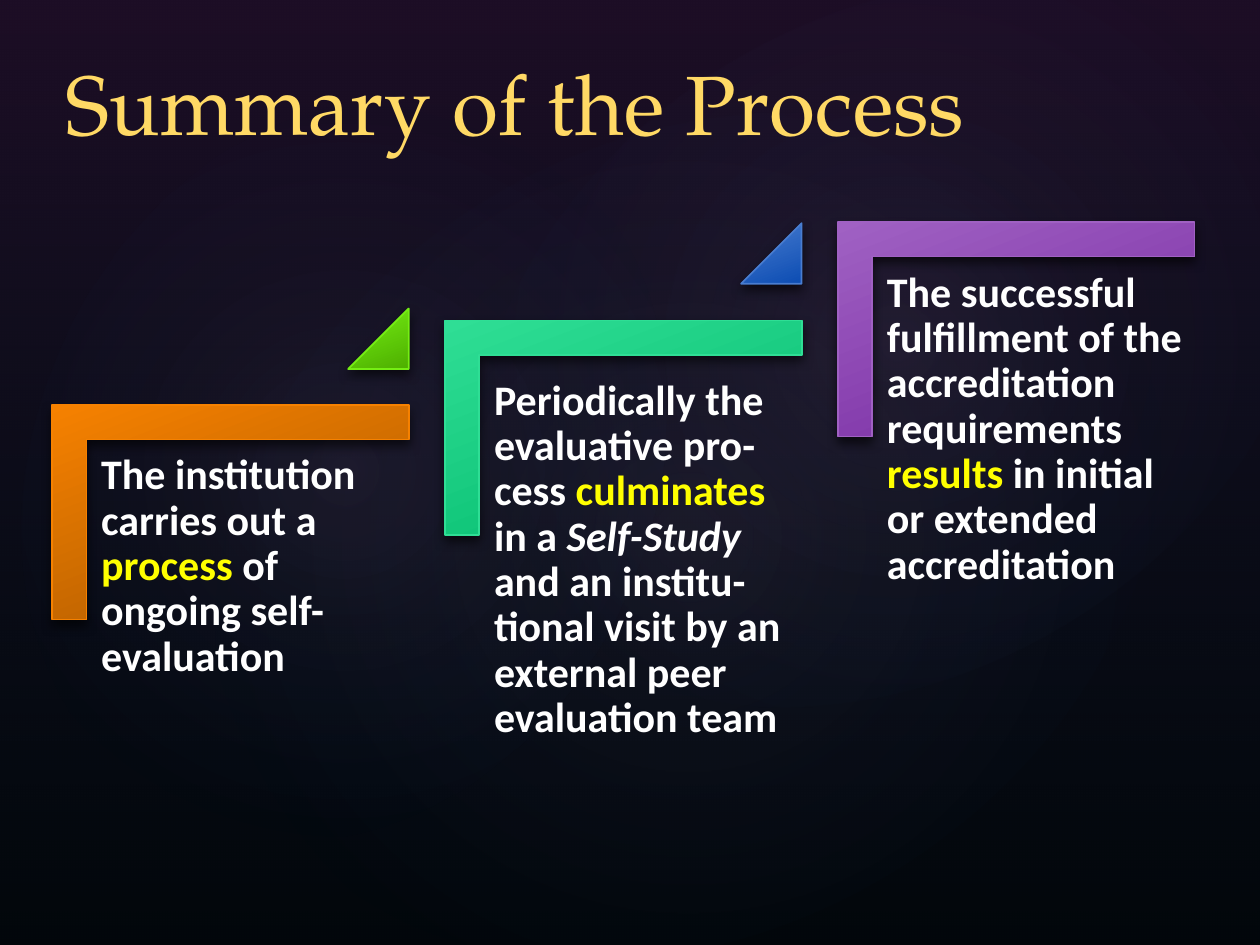
import pptx
import pptx.dml.color
import pptx.enum.shapes
import pptx.enum.text
import pptx.oxml
import pptx.oxml.ns
import pptx.util

Cm = pptx.util.Cm
Pt = pptx.util.Pt
RGB = pptx.dml.color.RGBColor.from_string
SHAPES = pptx.enum.shapes.MSO_SHAPE
ANCHOR = pptx.enum.text.MSO_ANCHOR
NAMESPACE = pptx.oxml.ns.nsdecls("a")

COLORS = {
    "background": "000000", "title": "FFD965", "text": "FFFFFF", "key": "FFFF00",
    "shade": "52286A", "navy": "1D4775", "glow": "C6A0DB",
    "orange": "F68100", "orange dark": "A85800",
    "lime": "75EE14", "lime dark": "4EB000",
    "green": "2FDE95", "green dark": "00B86B",
    "blue": "497DD0", "blue dark": "0D4DB3",
    "purple": "A061C3", "purple dark": "7527A0",
}


def add_text(runs, left, top, width, height, size=24, font="Calibri", bold=True,
             inset=0.25, spacing=0.9, anchor=ANCHOR.TOP):
    """Add a text box; runs are (text, colour name, italic) tuples."""
    frame = slide.shapes.add_textbox(Cm(left), Cm(top), Cm(width), Cm(height)).text_frame
    frame.word_wrap = True
    frame.vertical_anchor = anchor
    frame.margin_left = frame.margin_right = Cm(0.25)
    frame.margin_top = frame.margin_bottom = Cm(inset)
    paragraph = frame.paragraphs[0]
    paragraph.line_spacing = spacing
    for text, color, italic in runs:
        run = paragraph.add_run()
        run.text = text
        run.font.name = font
        run.font.size = Pt(size)
        run.font.bold = bold
        run.font.italic = italic
        run.font.color.rgb = RGB(COLORS[color])


def add_gradient_shape(kind, left, top, width, height, stops, angle=None, rotation=0, line=None):
    """Stops are (percent, colour name, opacity); without an angle the gradient is radial.

    A shape with a line also gets a soft shadow below it.
    """
    shape = slide.shapes.add_shape(kind, Cm(left), Cm(top), Cm(width), Cm(height))
    shape.rotation = rotation
    shape.shadow.inherit = False
    shape.fill.background()
    stop_xml = "".join(
        f'<a:gs pos="{position * 1000}"><a:srgbClr val="{COLORS[color]}">'
        f'<a:alpha val="{opacity * 1000}"/></a:srgbClr></a:gs>'
        for position, color, opacity in stops)
    if angle is None:
        direction = ('<a:path path="circle"><a:fillToRect l="50000" t="50000" '
                     'r="50000" b="50000"/></a:path>')
    else:
        direction = f'<a:lin ang="{angle * 60000}" scaled="0"/>'
    properties = shape.element.spPr
    empty_fill = properties.find(pptx.oxml.ns.qn("a:noFill"))
    properties.replace(empty_fill, pptx.oxml.parse_xml(
        f'<a:gradFill {NAMESPACE} rotWithShape="0"><a:gsLst>{stop_xml}</a:gsLst>{direction}</a:gradFill>'))
    if line is None:
        shape.line.fill.background()
        return shape
    shape.line.color.rgb = RGB(COLORS[line])
    shape.line.width = Pt(1)
    properties.find(pptx.oxml.ns.qn("a:effectLst")).append(pptx.oxml.parse_xml(
        f'<a:outerShdw {NAMESPACE} blurRad="{Pt(6)}" dist="{Pt(3)}" dir="5400000" rotWithShape="0">'
        '<a:srgbClr val="000000"><a:alpha val="60000"/></a:srgbClr></a:outerShdw>'))
    return shape


presentation = pptx.Presentation()
presentation.slide_width = Cm(25.4)
presentation.slide_height = Cm(19.05)
slide = presentation.slides.add_slide(presentation.slide_layouts[6])
slide.background.fill.solid()
slide.background.fill.fore_color.rgb = RGB(COLORS["background"])

# Dark backdrop with three soft glows
add_gradient_shape(SHAPES.RECTANGLE, 0, 0, 25.4, 19.05,
                   [(0, "shade", 36), (100, "navy", 10)], angle=90)
for left, top, width, height, rotation, opacity in [
    (3.81, 2.9, 20.12, 15.85, 328.7, 7),
    (-0.76, 3.25, 15.39, 12.45, 294.3, 8),
    (9.09, 0.33, 18.01, 13.21, 328.7, 8),
]:
    add_gradient_shape(SHAPES.OVAL, left, top, width, height,
                       [(0, "glow", opacity), (58, "navy", 0)], rotation=rotation)

# Rising steps: bracket top and colour, text top and runs, triangle top and colour
steps = [
    (8.17, "orange", 8.89,
     [("The institution carries out a ", "text", False), ("process", "key", False),
      (" of ongoing self-evaluation", "text", False)],
     6.22, "lime"),
    (6.46, "green", 7.39,
     [("Periodically the evaluative pro-cess ", "text", False), ("culminates", "key", False),
      (" in a ", "text", False), ("Self-Study", "text", True),
      (" and an institu-tional visit by an external peer evaluation team", "text", False)],
     4.5, "blue"),
    (4.48, "purple", 5.21,
     [("The successful fulfillment of the accreditation requirements ", "text", False),
      ("results", "key", False), (" in initial or extended accreditation", "text", False)],
     None, None),
]
STEP_LEFT, STEP_PITCH = 1.05, 7.92
BRACKET_WIDTH, BRACKET_HEIGHT, TRIANGLE = 7.19, 4.32, 1.22
turn_offset = (BRACKET_WIDTH - BRACKET_HEIGHT) / 2  # the bracket is a corner turned by 90°

for index, (top, color, text_top, runs, triangle_top, triangle_color) in enumerate(steps):
    left = STEP_LEFT + index * STEP_PITCH
    bracket = add_gradient_shape(
        SHAPES.CORNER, left + turn_offset, top - turn_offset, BRACKET_HEIGHT, BRACKET_WIDTH,
        [(0, color, 100), (100, f"{color} dark", 100)], angle=69, rotation=90, line=color)
    bracket.adjustments[0] = bracket.adjustments[1] = 0.16
    add_text(runs, left + 0.74, text_top, 6.45, 5.6)
    if triangle_color:
        triangle = add_gradient_shape(
            SHAPES.ISOSCELES_TRIANGLE, left + BRACKET_WIDTH - TRIANGLE, triangle_top,
            TRIANGLE, TRIANGLE,
            [(0, triangle_color, 100), (100, f"{triangle_color} dark", 100)],
            angle=69, line=triangle_color)
        triangle.adjustments[0] = 1

add_text([("Summary of the Process", "title", False)], 1.07, 1.07, 23.06, 2.13, size=48,
         font="TeX Gyre Pagella", bold=False, inset=0.13, spacing=1.0, anchor=ANCHOR.BOTTOM)

presentation.save("out.pptx")
